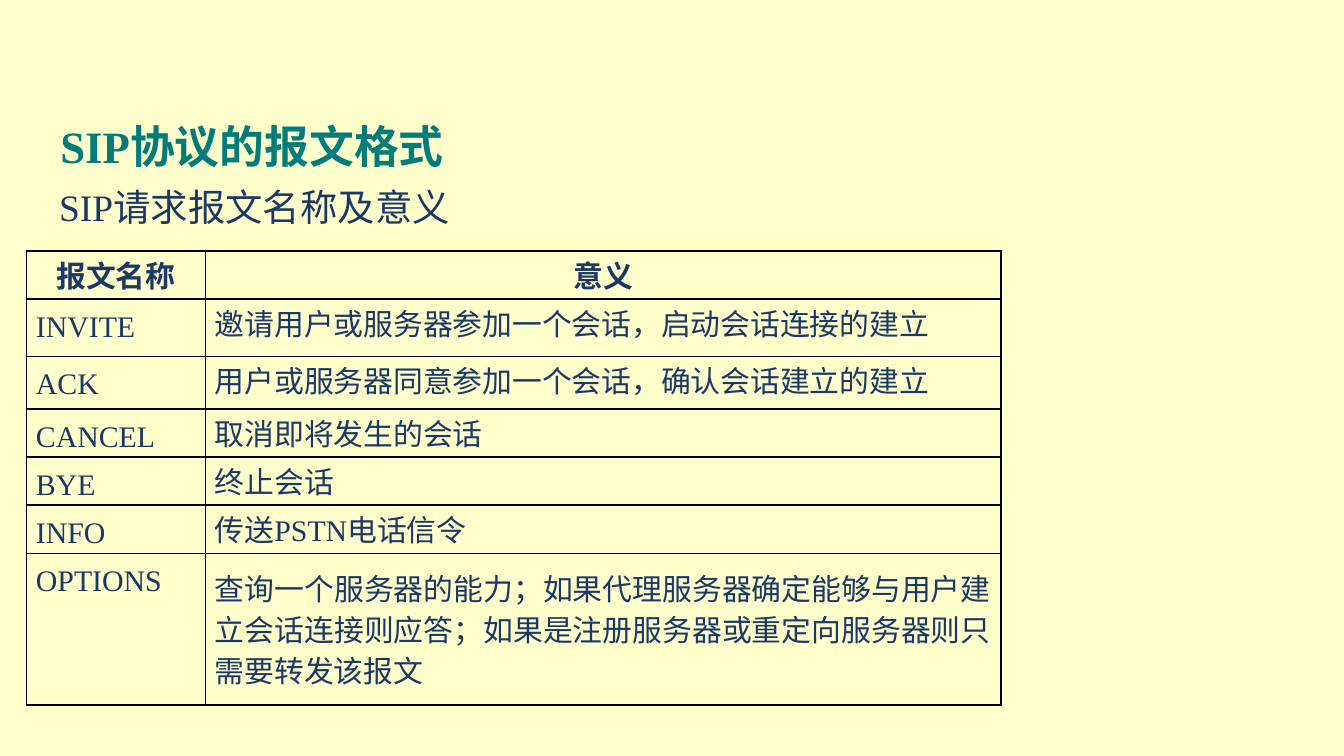
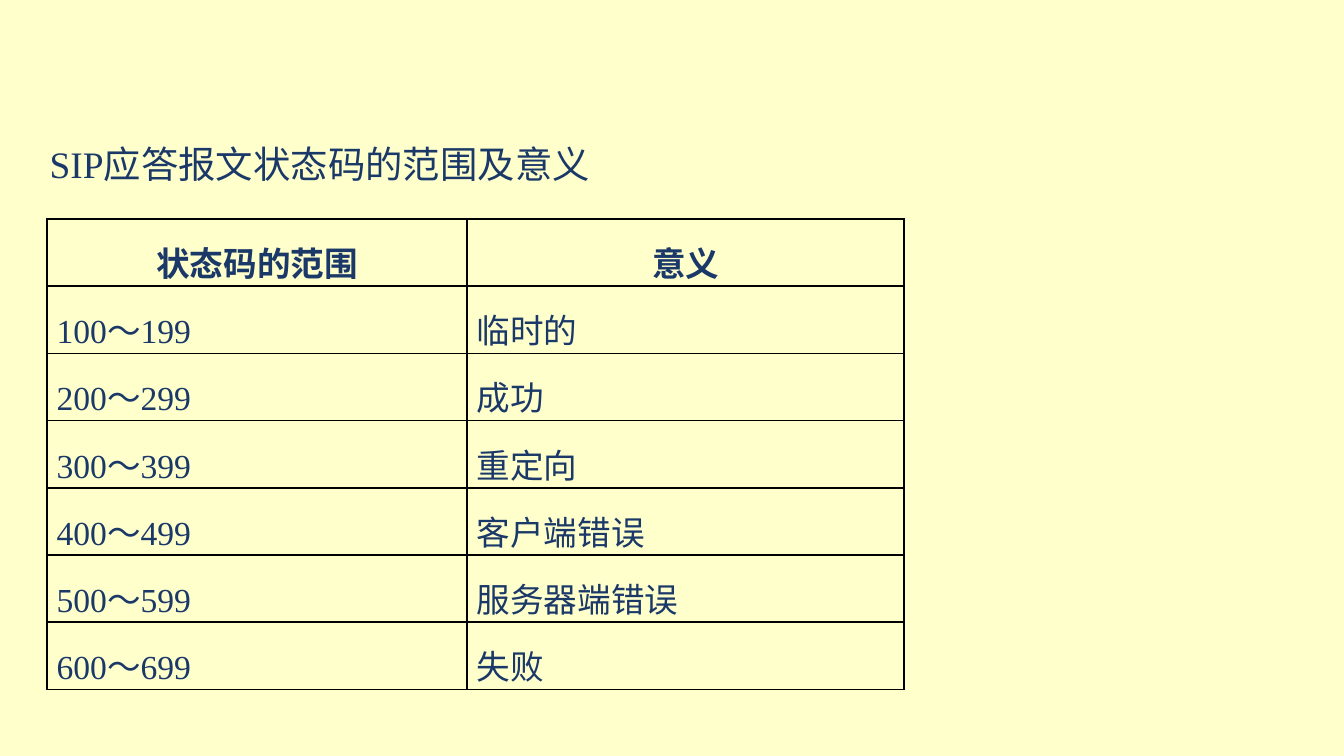
import pptx
import pptx.dml.color
import pptx.enum.lang
import pptx.enum.text
import pptx.util
import lxml.etree

Cm = pptx.util.Cm
Pt = pptx.util.Pt
ALIGN = pptx.enum.text.PP_ALIGN
ANCHOR = pptx.enum.text.MSO_ANCHOR
CHINESE = pptx.enum.lang.MSO_LANGUAGE_ID.SIMPLIFIED_CHINESE

CREAM = "FFFFCC"
TEAL = "007D7A"
NAVY = "1A3868"
BLACK = "000000"

METHODS = [
    ("报文名称", "意义"),
    ("INVITE", "邀请用户或服务器参加一个会话，启动会话连接的建立"),
    ("ACK", "用户或服务器同意参加一个会话，确认会话建立的建立"),
    ("CANCEL", "取消即将发生的会话"),
    ("BYE", "终止会话"),
    ("INFO", "传送PSTN电话信令"),
    ("OPTIONS", "查询一个服务器的能力；如果代理服务器确定能够与用户建立会话连接则应答；"
                "如果是注册服务器或重定向服务器则只需要转发该报文"),
]
MEANINGS = ["临时的", "成功", "重定向", "客户端错误", "服务器端错误", "失败"]
CODES = [("状态码的范围", "意义")] + [
    (f"{n}00～{n}99", text) for n, text in enumerate(MEANINGS, 1)]


def color(code):
    return pptx.dml.color.RGBColor.from_string(code)


class Deck:
    face = "Times New Roman"

    def __init__(self):
        self.file = pptx.Presentation()
        self.file.slide_width = Cm(25.4)
        self.file.slide_height = Cm(14.29)
        self.slide = None

    def page(self):
        self.slide = self.file.slides.add_slide(self.file.slide_layouts[6])
        fill = self.slide.background.fill
        fill.solid()
        fill.fore_color.rgb = color(CREAM)

    def style(self, para, size, code=NAVY, bold=False):
        for run in para.runs:
            font = run.font
            font.name = self.face
            font.size = Pt(size)
            font.bold = bold
            font.color.rgb = color(code)
            font.language_id = CHINESE

    def text(self, box, text, size, code=NAVY, bold=False, anchor=ANCHOR.MIDDLE):
        frame = self.slide.shapes.add_textbox(*map(Cm, box)).text_frame
        frame.word_wrap = True
        frame.vertical_anchor = anchor
        frame.text = text
        self.style(frame.paragraphs[0], size, code, bold)

    def border(self, cell):
        props = cell._tc.get_or_add_tcPr()
        for side in "LRTB":
            props.append(lxml.etree.fromstring(
                '<a:ln%s xmlns:a="http://schemas.openxmlformats.org/drawingml/2006/main"'
                ' w="12700"><a:solidFill><a:srgbClr val="%s"/></a:solidFill></a:ln%s>'
                % (side, BLACK, side)))

    def table(self, spot, widths, heights, rows, size, top):
        """Draw rows with a bold header; top is the inset above each cell's text in points."""
        left, y = spot
        grid = self.slide.shapes.add_table(
            len(rows), len(widths), Cm(left), Cm(y),
            Cm(sum(widths)), Cm(sum(heights))).table
        grid.first_row = grid.horz_banding = False
        for col, width in zip(grid.columns, widths):
            col.width = Cm(width)
        for r, (row, height) in enumerate(zip(rows, heights)):
            grid.rows[r].height = Cm(height)
            for c, text in enumerate(row):
                cell = grid.cell(r, c)
                self.border(cell)
                cell.fill.background()
                cell.margin_left = cell.margin_right = Cm(0.18)
                cell.margin_top = Pt(top)
                cell.margin_bottom = 0
                cell.text_frame.text = text
                para = cell.text_frame.paragraphs[0]
                para.alignment = ALIGN.JUSTIFY if r else ALIGN.CENTER
                para.line_spacing = Pt(12)
                self.style(para, size, bold=r == 0)
        return grid


def main():
    deck = Deck()

    deck.page()
    deck.text((0.89, 1.96, 20.52, 1.57), "SIP协议的报文格式", 24, TEAL, True)
    deck.text((0.87, 3.35, 21.4, 1.4), "SIP请求报文名称及意义", 20, anchor=ANCHOR.TOP)
    grid = deck.table((0.5, 4.74), [3.38, 15.04],
                      [0.91, 1.09, 0.99, 0.91, 0.91, 0.91, 2.87], METHODS, 16, 12)
    long = grid.cell(6, 1)
    long.margin_top = 0
    long.vertical_anchor = ANCHOR.MIDDLE
    long.text_frame.paragraphs[0].line_spacing = Pt(22)

    deck.page()
    deck.text((0.69, 2.06, 13, 2.08), "SIP应答报文状态码的范围及意义", 20)
    deck.table((0.89, 4.14), [7.94, 8.26], [1.27] * len(CODES), CODES, 18, 24)

    deck.file.save("out.pptx")


if __name__ == "__main__":
    main()
